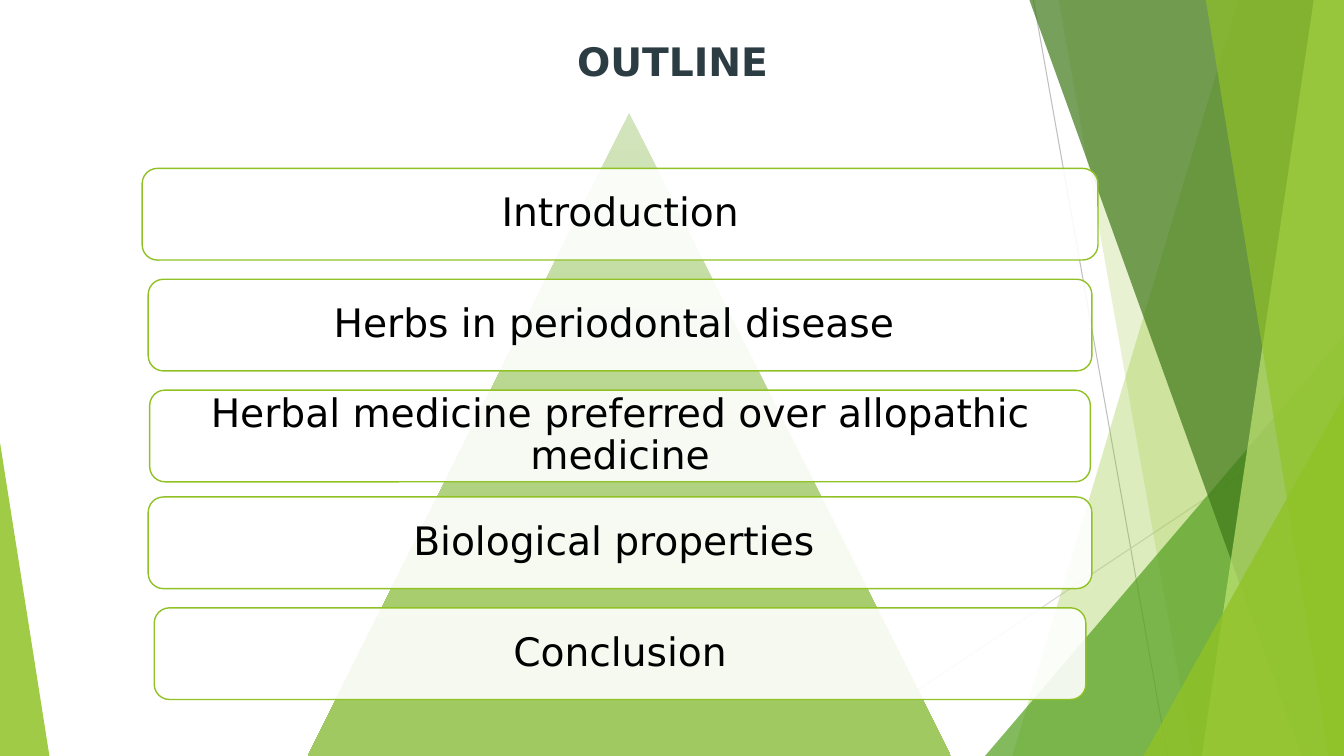
import pptx
import pptx.util
import pptx.dml.color
import pptx.enum.shapes
import pptx.enum.text
import pptx.oxml.ns
import lxml.etree

RGBColor = pptx.dml.color.RGBColor
MSO_SHAPE = pptx.enum.shapes.MSO_SHAPE
PP_ALIGN = pptx.enum.text.PP_ALIGN
MSO_ANCHOR = pptx.enum.text.MSO_ANCHOR
qn = pptx.oxml.ns.qn

EMU_PER_PX = 9144
WIDTH, HEIGHT = 1333, 750
FONT = "DejaVu Sans"

WHITE = RGBColor(0xFF, 0xFF, 0xFF)
BLACK = RGBColor(0x00, 0x00, 0x00)
SLATE = RGBColor(0x2C, 0x3C, 0x43)
GREY = RGBColor(0xBF, 0xBF, 0xBF)
LIGHT_GREY = RGBColor(0xD9, 0xD9, 0xD9)
LIME = RGBColor(0x90, 0xC2, 0x26)
GREEN = RGBColor(0x54, 0xA0, 0x21)
DARK_GREEN = RGBColor(0x3F, 0x78, 0x19)
PALE_LIME = RGBColor(0xC0, 0xE4, 0x74)
PYRAMID_TOP = RGBColor(0xD3, 0xE5, 0xBE)
PYRAMID_BASE = RGBColor(0xA0, 0xC9, 0x62)

BAR_CENTER, BAR_HEIGHT = 615, 91
TOPICS = [
    ("Introduction", 167, 948),
    ("Herbs in periodontal disease ", 277, 936),
    ("Herbal medicine preferred over allopathic medicine", 387, 933),
    ("Biological properties ", 493, 936),
    ("Conclusion", 603, 924),
]


def px(length):
    return pptx.util.Emu(round(length * EMU_PER_PX))


def fill_translucent(shape, color, opacity):
    shape.shadow.inherit = False
    shape.fill.solid()
    shape.fill.fore_color.rgb = color
    color_element = shape.element.spPr.find(qn("a:solidFill")).find(qn("a:srgbClr"))
    alpha = lxml.etree.SubElement(color_element, qn("a:alpha"))
    alpha.set("val", str(opacity * 1000))


def style_paragraph(paragraph, color, bold=False):
    paragraph.alignment = PP_ALIGN.CENTER
    paragraph.font.name = FONT
    paragraph.font.size = pptx.util.Pt(28)
    paragraph.font.bold = bold
    paragraph.font.color.rgb = color


def add_hairline(slide, start, end, color):
    line = slide.shapes.add_connector(
        pptx.enum.shapes.MSO_CONNECTOR.STRAIGHT, *map(px, start + end))
    line.line.color.rgb = color
    line.line.width = pptx.util.Pt(0.75)
    lxml.etree.SubElement(line.element.spPr, qn("a:effectLst"))


def add_band(slide, top_left, bottom_left, color, opacity):
    builder = slide.shapes.build_freeform(top_left, 0, scale=EMU_PER_PX)
    builder.add_line_segments([(WIDTH, 0), (WIDTH, HEIGHT), (bottom_left, HEIGHT)])
    band = builder.convert_to_shape()
    fill_translucent(band, color, opacity)
    band.line.fill.background()


def add_triangle(slide, left, top, width, apex):
    triangle = slide.shapes.add_shape(
        MSO_SHAPE.ISOSCELES_TRIANGLE, px(left), px(top), px(width), px(HEIGHT - top))
    triangle.adjustments[0] = apex
    triangle.shadow.inherit = False
    triangle.line.fill.background()
    return triangle


def add_facets(slide):
    add_hairline(slide, (1025, 0), (1158, HEIGHT), GREY)
    add_hairline(slide, (WIDTH, 403), (812, HEIGHT), LIGHT_GREY)
    add_band(slide, 1228, 1004, LIME, 30)
    add_band(slide, 1050, 1183, LIME, 20)
    fill_translucent(add_triangle(slide, 977, 333, 356, 1), GREEN, 72)
    add_band(slide, 1021, 1291, DARK_GREEN, 70)
    add_band(slide, 1303, 1192, PALE_LIME, 70)
    add_band(slide, 1196, 1318, LIME, 65)
    fill_translucent(add_triangle(slide, 1134, 393, 199, 1), LIME, 80)
    fill_translucent(add_triangle(slide, 0, 439, 49, 0), LIME, 85)


def set_title(slide, text):
    title = slide.shapes.title
    title.left, title.top, title.width, title.height = map(px, (92, 32, 1150, 105))
    title.text_frame.text = text
    title.text_frame.vertical_anchor = MSO_ANCHOR.TOP
    style_paragraph(title.text_frame.paragraphs[0], SLATE, bold=True)


def add_pyramid(slide):
    pyramid = add_triangle(slide, 305, 112, 638, 0.5)
    pyramid.fill.gradient()
    pyramid.fill.gradient_angle = 270
    stops = [(0, PYRAMID_TOP), (0.88, PYRAMID_BASE)]
    for stop, (position, color) in zip(pyramid.fill.gradient_stops, stops):
        stop.position = position
        stop.color.rgb = color


def add_topic(slide, text, top, width):
    bar = slide.shapes.add_shape(
        MSO_SHAPE.ROUNDED_RECTANGLE,
        px(BAR_CENTER - width / 2), px(top), px(width), px(BAR_HEIGHT))
    fill_translucent(bar, WHITE, 90)
    bar.line.color.rgb = LIME
    bar.line.width = pptx.util.Pt(1)
    frame = bar.text_frame
    frame.word_wrap = True
    frame.vertical_anchor = MSO_ANCHOR.MIDDLE
    frame.margin_left = frame.margin_right = px(12)
    frame.margin_top = frame.margin_bottom = px(12)
    frame.text = text
    frame.paragraphs[0].line_spacing = 0.9
    style_paragraph(frame.paragraphs[0], BLACK)


def main():
    presentation = pptx.Presentation()
    presentation.slide_width = px(WIDTH)
    presentation.slide_height = px(HEIGHT)
    slide = presentation.slides.add_slide(presentation.slide_layouts[5])
    add_facets(slide)
    set_title(slide, "OUTLINE")
    add_pyramid(slide)
    for text, top, width in TOPICS:
        add_topic(slide, text, top, width)
    presentation.save("out.pptx")


if __name__ == "__main__":
    main()
